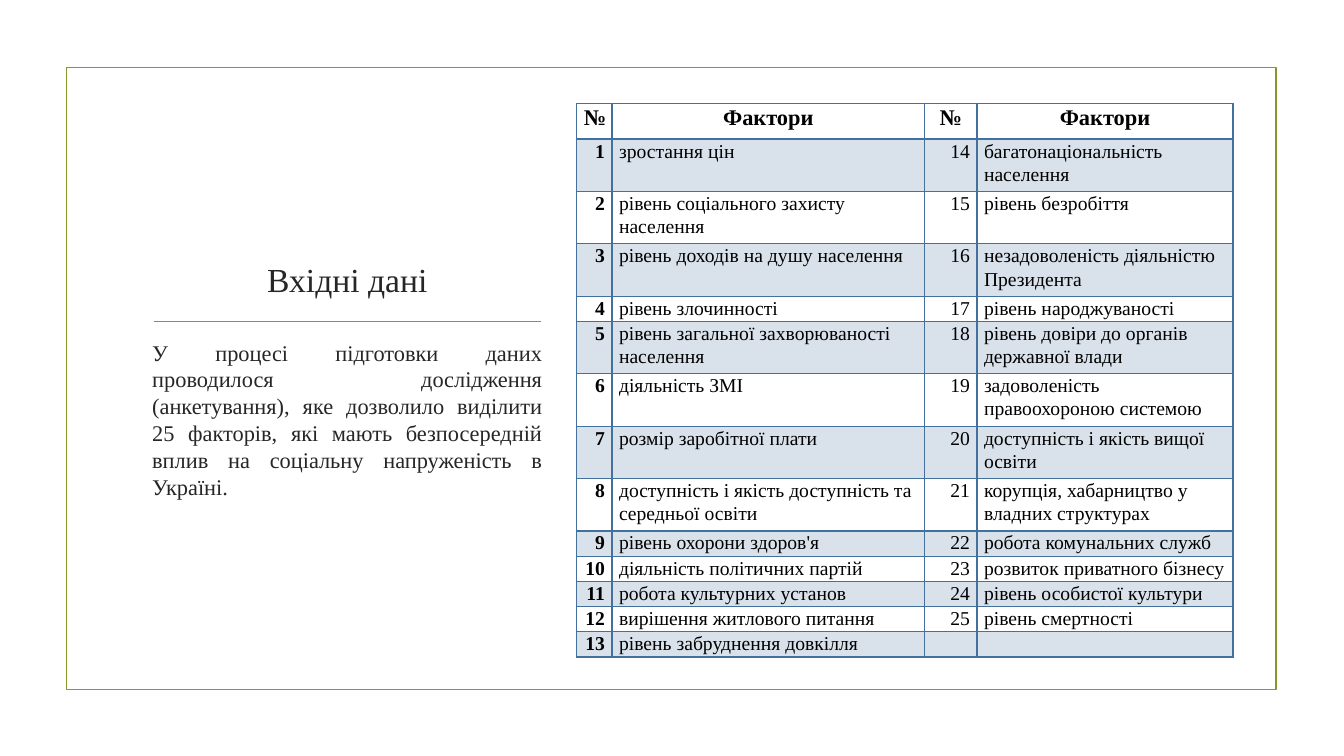
from lxml.etree import SubElement
from pptx import Presentation
from pptx.dml.color import RGBColor
from pptx.enum.shapes import MSO_CONNECTOR, MSO_SHAPE
from pptx.enum.text import MSO_ANCHOR, MSO_AUTO_SIZE, PP_ALIGN
from pptx.oxml.ns import qn
from pptx.util import Inches, Pt

FONT = "Times New Roman"
GREEN, BLUE, DARK = "83992A", "44709D", "262626"
COLS = (0.35, 3.1, 0.52, 2.54)
TALL_ROWS = (1, 2, 3, 5, 6, 7, 8)
INTRO = ("У процесі підготовки даних проводилося дослідження (анкетування), "
         "яке дозволило виділити 25 факторів, які мають безпосередній вплив "
         "на соціальну напруженість в Україні.")
FACTORS = (
    "зростання цін",
    "рівень соціального захисту населення",
    "рівень доходів на душу населення",
    "рівень злочинності",
    "рівень загальної захворюваності населення",
    "діяльність ЗМІ",
    "розмір заробітної плати",
    "доступність і якість доступність та середньої освіти",
    "рівень охорони здоров'я",
    "діяльність політичних партій",
    "робота культурних установ",
    "вирішення житлового питання",
    "рівень забруднення довкілля",
    "багатонаціональність населення",
    "рівень безробіття",
    "незадоволеність діяльністю Президента",
    "рівень народжуваності",
    "рівень довіри до органів державної влади",
    "задоволеність правоохороною системою",
    "доступність і якість вищої освіти",
    "корупція, хабарництво у владних структурах",
    "робота комунальних служб",
    "розвиток приватного бізнесу",
    "рівень особистої культури",
    "рівень смертності",
)


def rgb(color):
    """Turn a hex string into a colour."""
    return RGBColor.from_string(color)


def write(tf, text, size=14, color="000000", bold=False, align=PP_ALIGN.LEFT, spacing=None):
    """Write one formatted paragraph into a text frame."""
    p = tf.paragraphs[0]
    p.alignment = align
    if spacing:
        p.line_spacing = spacing
    if not text:
        SubElement(p._p, qn("a:endParaRPr"), sz=str(size * 100))
        return p
    r = p.add_run()
    r.text = text
    r.font.name, r.font.size, r.font.bold = FONT, Pt(size), bold
    r.font.color.rgb = rgb(color)
    return p


def place(shape, x, y, w, h):
    """Move a shape to a box given in inches."""
    shape.left, shape.top = Inches(x), Inches(y)
    shape.width, shape.height = Inches(w), Inches(h)


def add_frame(s, x, y, w, h):
    """Draw the thin outline around the slide."""
    frame = s.shapes.add_shape(MSO_SHAPE.RECTANGLE, Inches(x), Inches(y), Inches(w), Inches(h))
    frame.shadow.inherit = False
    frame.fill.background()
    frame.line.color.rgb = rgb(GREEN)
    frame.line.width = Pt(1.25)


def add_caption(s, x, y, w, h):
    """Place the title, the rule below it and the introduction."""
    title, body = s.shapes.title, s.placeholders[1]
    place(title, x, y, w, 1.5)
    place(body, x, y + 1.79, w, h - 1.79)
    for sp, anchor in ((title, MSO_ANCHOR.BOTTOM), (body, MSO_ANCHOR.TOP)):
        sp.text_frame.word_wrap = True
        sp.text_frame.auto_size = MSO_AUTO_SIZE.NONE
        sp.text_frame.vertical_anchor = anchor
    write(title.text_frame, "Вхідні дані", size=24, color=DARK, align=PP_ALIGN.CENTER)
    p = write(body.text_frame, INTRO, size=16, color=DARK, align=PP_ALIGN.JUSTIFY)
    p.space_before, p.space_after = Pt(0), Pt(6)
    pPr = p._p.get_or_add_pPr()
    pPr.set("marL", "0")
    pPr.set("indent", "0")
    SubElement(pPr, qn("a:buNone"))

    rule_y = Inches(y + 1.67)
    rule = s.shapes.add_connector(MSO_CONNECTOR.STRAIGHT, Inches(x + 0.12), rule_y,
                                  Inches(x + w - 0.11), rule_y)
    rule.line.color.rgb = rgb(GREEN)
    rule.line.width = Pt(1.25)
    SubElement(rule._element.spPr, qn("a:effectLst"))


def style_cell(cell, row):
    """Set the margins, borders and band fill of a cell."""
    cell.margin_left = cell.margin_right = Inches(0.07)
    cell.margin_top = cell.margin_bottom = 0
    tcPr = cell._tc.get_or_add_tcPr()
    widths = {"lnL": 1, "lnR": 1, "lnT": 2 if row == 1 else 1, "lnB": 2 if row == 0 else 1}
    for side, width in widths.items():
        ln = SubElement(tcPr, qn(f"a:{side}"), w=str(Pt(width)))
        SubElement(SubElement(ln, qn("a:solidFill")), qn("a:srgbClr"), val=BLUE)
    if row % 2:
        cell.fill.solid()
        cell.fill.fore_color.rgb = rgb(BLUE)
        SubElement(tcPr.find(f"{qn('a:solidFill')}/{qn('a:srgbClr')}"), qn("a:alpha"), val="20000")
    else:
        cell.fill.background()


def add_factors(s, x, y, w, h):
    """Fill the table of numbered factors, two halves side by side."""
    half = (len(FACTORS) + 1) // 2
    table = s.shapes.add_table(half + 1, len(COLS), Inches(x), Inches(y), Inches(w), Inches(h)).table
    table.first_row = table.horz_banding = False
    for col, width in zip(table.columns, COLS):
        col.width = Inches(width)
    for i, row in enumerate(table.rows):
        row.height = Inches(0.35 if i == 0 else 0.52 if i in TALL_ROWS else 0.25)
        for j, cell in enumerate(row.cells):
            style_cell(cell, i)
            is_number = j % 2 == 0
            n = i + half * (j // 2)
            if i == 0:
                write(cell.text_frame, "№" if is_number else "Фактори", size=16, bold=True,
                      align=PP_ALIGN.CENTER, spacing=1.07)
            elif n > len(FACTORS):
                write(cell.text_frame, "")
            elif is_number:
                write(cell.text_frame, str(n), bold=j == 0, align=PP_ALIGN.RIGHT, spacing=1.07)
            else:
                write(cell.text_frame, FACTORS[n - 1], spacing=1.07)


def main():
    """Build the slide and save it."""
    prs = Presentation()
    prs.slide_width, prs.slide_height = Inches(13.33), Inches(7.5)
    s = prs.slides.add_slide(prs.slide_layouts[1])
    add_frame(s, 0.66, 0.67, 12, 6.17)
    add_caption(s, 1.41, 1.52, 4.07, 4.46)
    add_factors(s, 5.72, 1.03, 6.51, 5.49)
    prs.save("out.pptx")


if __name__ == "__main__":
    main()
